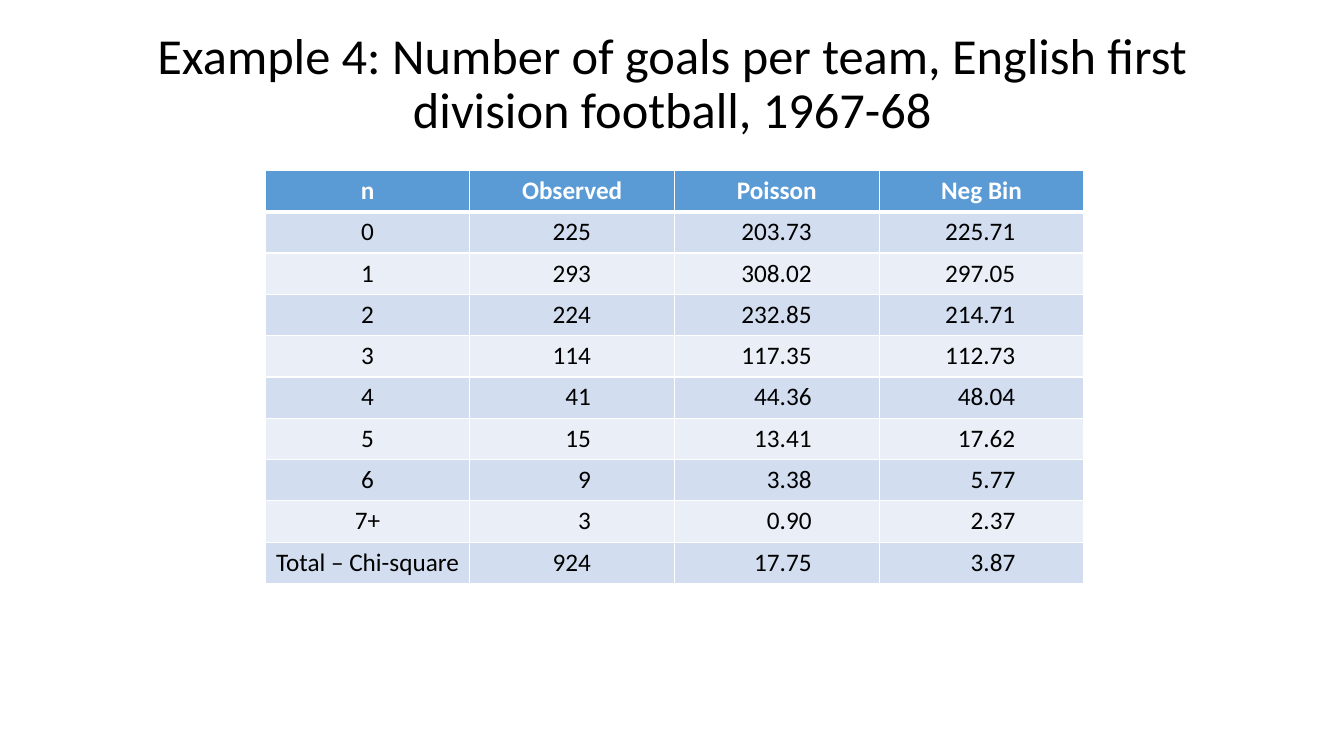
import pptx
import pptx.util
import pptx.dml.color
import pptx.enum.text
import pptx.oxml
import pptx.oxml.ns

# Content
TITLE = "Example 4: Number of goals per team, English first division football, 1967-68"
ROWS = [
    ("n", "Observed", "Poisson", "Neg Bin"),
    ("0", "225", "203.73", "225.71"),
    ("1", "293", "308.02", "297.05"),
    ("2", "224", "232.85", "214.71"),
    ("3", "114", "117.35", "112.73"),
    ("4", "41", "44.36", "48.04"),
    ("5", "15", "13.41", "17.62"),
    ("6", "9", "3.38", "5.77"),
    ("7+", "3", "0.90", "2.37"),
    ("Total – Chi-square", "924", "17.75", "3.87"),
]
HEAD, BANDS = "5B9BD5", ("EAEFF7", "D2DEEF")
WHITE, BLACK = "FFFFFF", "000000"

# Grid, in inches
WIDE, HIGH = 13.33, 7.5
LEFT, TOP = 2.63, 1.69
COL, ROW = 2.03, 0.41
INSETS = (None, 0.83, 0.67, 0.68)  # right margin that lines up the figures

Inch, Pt = pptx.util.Inches, pptx.util.Pt
ALIGN = pptx.enum.text.PP_ALIGN


def color(code):
    return pptx.dml.color.RGBColor.from_string(code)


def style(par, size, code, align, bold=False):
    par.alignment = align
    font = par.font
    font.name, font.size, font.bold = "Calibri", Pt(size), bold
    font.color.rgb = color(code)


def border(cell, top, bottom):
    props = cell._tc.get_or_add_tcPr()
    edges = (("L", 1), ("R", 1), ("T", top), ("B", bottom))
    for i, (side, width) in enumerate(edges):
        line = pptx.oxml.parse_xml(
            f'<a:ln{side} {pptx.oxml.ns.nsdecls("a")} w="{Pt(width)}">'
            f'<a:solidFill><a:srgbClr val="{WHITE}"/></a:solidFill></a:ln{side}>')
        props.insert(i, line)


deck = pptx.Presentation()
deck.slide_width, deck.slide_height = Inch(WIDE), Inch(HIGH)
slide = deck.slides.add_slide(deck.slide_layouts[5])

# Title
title = slide.shapes.title
title.left, title.top = Inch(0.92), Inch(0.4)
title.width, title.height = Inch(11.5), Inch(0.89)
frame = title.text_frame
frame.text = TITLE
frame.word_wrap = True
frame.auto_size = pptx.enum.text.MSO_AUTO_SIZE.NONE
frame.vertical_anchor = pptx.enum.text.MSO_ANCHOR.MIDDLE
style(frame.paragraphs[0], 36, BLACK, ALIGN.CENTER)
frame.paragraphs[0].line_spacing = 0.9

# Table
table = slide.shapes.add_table(
    len(ROWS), len(ROWS[0]), Inch(LEFT), Inch(TOP),
    Inch(COL * len(ROWS[0])), Inch(ROW * len(ROWS))).table
for r, row in enumerate(ROWS):
    table.rows[r].height = Inch(ROW)
    for c, text in enumerate(row):
        cell = table.cell(r, c)
        cell.text = text
        cell.fill.solid()
        cell.fill.fore_color.rgb = color(BANDS[r % 2] if r else HEAD)
        figure = r > 0 and c > 0
        if figure:
            cell.margin_right = Inch(INSETS[c])
        style(cell.text_frame.paragraphs[0], 18, BLACK if r else WHITE,
              ALIGN.RIGHT if figure else ALIGN.CENTER, bold=r == 0)
        border(cell, 3 if r == 1 else 1, 3 if r == 0 else 1)

deck.save("out.pptx")
